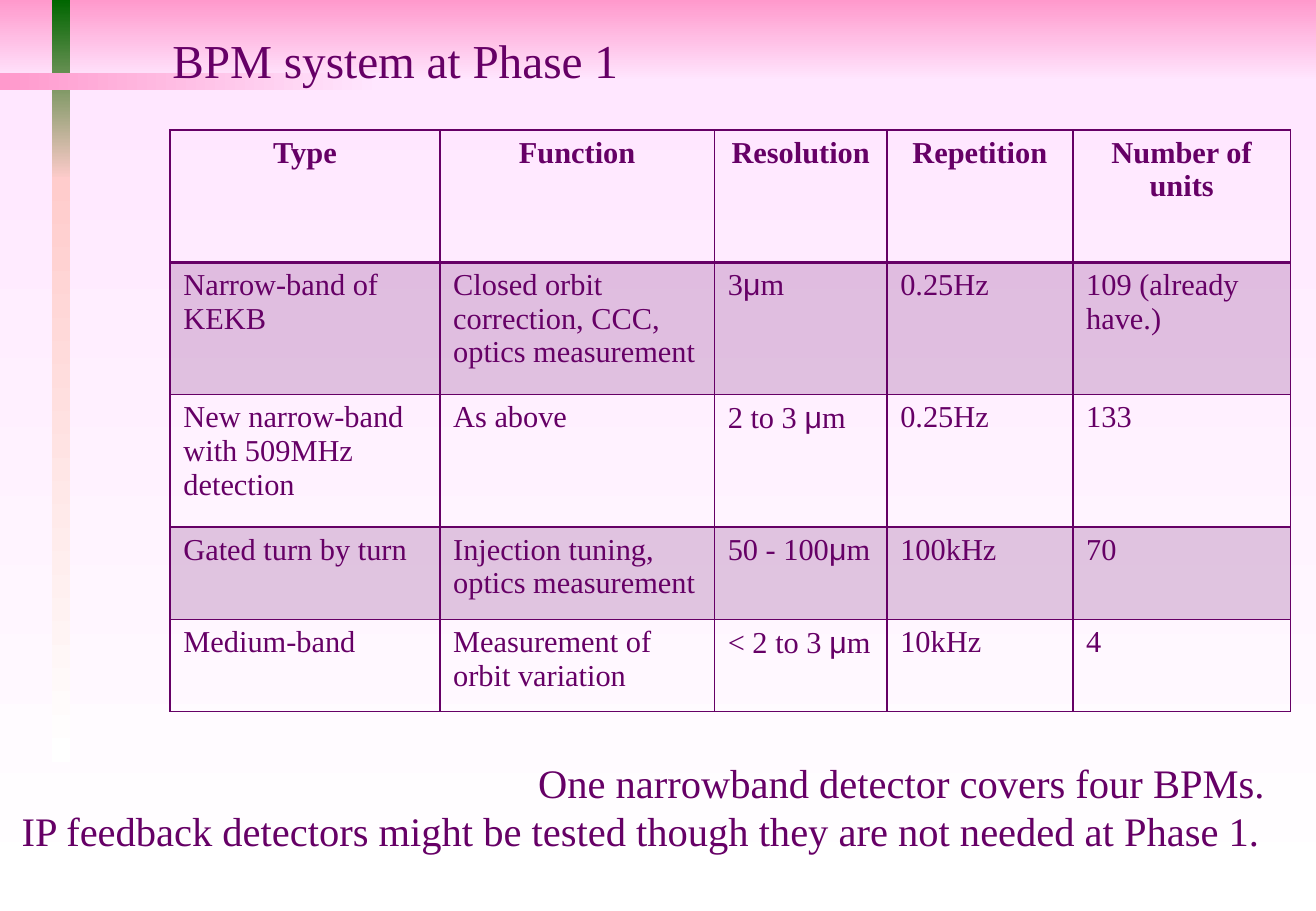
from dataclasses import dataclass

from lxml import etree
from pptx import Presentation
from pptx import util as u
from pptx.dml.color import RGBColor
from pptx.enum import shapes, text
from pptx.oxml import ns

PURPLE = RGBColor(0x66, 0x00, 0x66)
PINK = RGBColor(0xFF, 0x99, 0xCC)
PALE_PINK = RGBColor(0xFF, 0xE7, 0xFF)
GREEN = RGBColor(0x00, 0x66, 0x00)
SALMON = RGBColor(0xFF, 0xCC, 0xCC)
WHITE = RGBColor(0xFF, 0xFF, 0xFF)

SERIF = "Times New Roman"
SANS = "Arial"
MICRO = "μ"
DOWNWARD = 270
RIGHTWARD = 0
SLIDE_WIDTH = 10.83
SLIDE_HEIGHT = 7.5


@dataclass(frozen=True)
class Band:
    left: float
    top: float
    width: float
    height: float
    start: RGBColor
    end: RGBColor
    angle: int = DOWNWARD


@dataclass(frozen=True)
class Line:
    content: str
    indent: float = 0


@dataclass(frozen=True)
class Note:
    left: float
    top: float
    width: float
    height: float
    size: int
    lines: tuple[Line, ...]
    wrap: bool = True


BANDS = (
    Band(0, 0, SLIDE_WIDTH, 0.67, PINK, PALE_PINK),
    Band(0, 0.67, SLIDE_WIDTH, 6.83, PALE_PINK, WHITE),
    Band(0.43, 0, 0.15, 1.48, GREEN, SALMON),
    Band(0.43, 1.46, 0.15, 4.81, SALMON, WHITE),
    Band(0, 0.6, 3.14, 0.14, PINK, PALE_PINK, RIGHTWARD),
)

COLUMN_WIDTHS = (2.22, 2.26, 1.42, 1.53, 1.79)
ROW_HEIGHTS = (1.09, 1.09, 1.09, 0.76, 0.76)
DETECTORS = (
    ("Type", "Function", "Resolution", "Repetition", "Number of units"),
    ("Narrow-band of KEKB", "Closed orbit correction, CCC, optics measurement",
     "3μm", "0.25Hz", "109 (already have.)"),
    ("New narrow-band with 509MHz detection", "As above",
     "2 to 3 μm", "0.25Hz", "133"),
    ("Gated turn by turn", "Injection tuning, optics measurement",
     "50 - 100μm", "100kHz", "70"),
    ("Medium-band", "Measurement of orbit variation",
     "< 2 to 3 μm", "10kHz", "4"),
)

NOTES = (
    Note(0, 6.19, 10.56, 0.91, 24, (
        Line("One narrowband detector covers four BPMs.", 4.33),
        Line("IP feedback detectors might be tested though they are not needed at Phase 1.", 0.08),
    )),
    Note(1.32, 0.21, 3.91, 0.57, 28, (Line("BPM system at Phase 1"),), wrap=False),
)


def style_run(run, size: int, bold: bool = False, font: str = SERIF) -> None:
    run.font.name = font
    run.font.size = u.Pt(size)
    run.font.bold = bold
    run.font.color.rgb = PURPLE


def draw_band(slide, band: Band) -> None:
    stripe = slide.shapes.add_shape(
        shapes.MSO_SHAPE.RECTANGLE, u.Inches(band.left), u.Inches(band.top),
        u.Inches(band.width), u.Inches(band.height))
    stripe.shadow.inherit = False
    stripe.line.fill.background()
    stripe.fill.gradient()
    stripe.fill.gradient_angle = band.angle
    for stop, color in zip(stripe.fill.gradient_stops, (band.start, band.end)):
        stop.color.rgb = color


def set_borders(cell, bottom: int, top: int) -> None:
    properties = cell._tc.get_or_add_tcPr()
    weights = {"a:lnL": 1, "a:lnR": 1, "a:lnT": top, "a:lnB": bottom}
    for position, (edge, weight) in enumerate(weights.items()):
        border = etree.Element(ns.qn(edge), w=str(u.Pt(weight)))
        solid = etree.SubElement(border, ns.qn("a:solidFill"))
        etree.SubElement(solid, ns.qn("a:srgbClr"), val=str(PURPLE))
        properties.insert(position, border)


def fill_cell(cell, shaded: bool) -> None:
    if not shaded:
        cell.fill.background()
        return
    cell.fill.solid()
    cell.fill.fore_color.rgb = PURPLE
    color = cell._tc.get_or_add_tcPr().find(".//" + ns.qn("a:srgbClr"))
    etree.SubElement(color, ns.qn("a:alpha"), val="20000")


def write_cell(cell, content: str, heading: bool) -> None:
    cell.margin_left = cell.margin_right = u.Inches(0.11)
    cell.margin_top = cell.margin_bottom = u.Inches(0.05)
    paragraph = cell.text_frame.paragraphs[0]
    paragraph.alignment = text.PP_ALIGN.CENTER if heading else text.PP_ALIGN.LEFT
    before, micro, after = content.partition(MICRO)
    for part in filter(None, (before, micro, after)):
        run = paragraph.add_run()
        run.text = part
        style_run(run, 18, heading, SANS if part == MICRO else SERIF)


def draw_detector_table(slide) -> None:
    table = slide.shapes.add_table(
        len(ROW_HEIGHTS), len(COLUMN_WIDTHS), u.Inches(1.4), u.Inches(1.07),
        u.Inches(sum(COLUMN_WIDTHS)), u.Inches(sum(ROW_HEIGHTS))).table
    table.first_row = table.horz_banding = False
    for column, width in zip(table.columns, COLUMN_WIDTHS):
        column.width = u.Inches(width)
    for index, (row, height, detector) in enumerate(zip(table.rows, ROW_HEIGHTS, DETECTORS)):
        row.height = u.Inches(height)
        for cell, content in zip(row.cells, detector):
            write_cell(cell, content, heading=index == 0)
            fill_cell(cell, shaded=index % 2 == 1)
            set_borders(cell, bottom=2 if index == 0 else 1, top=2 if index == 1 else 1)


def draw_note(slide, note: Note) -> None:
    frame = slide.shapes.add_textbox(
        u.Inches(note.left), u.Inches(note.top),
        u.Inches(note.width), u.Inches(note.height)).text_frame
    frame.word_wrap = note.wrap
    frame.auto_size = text.MSO_AUTO_SIZE.SHAPE_TO_FIT_TEXT
    frame.text = "\n".join(line.content for line in note.lines)
    for paragraph, line in zip(frame.paragraphs, note.lines):
        if line.indent:
            paragraph._p.get_or_add_pPr().set("marL", str(u.Inches(line.indent)))
        style_run(paragraph.runs[0], note.size)


def main() -> None:
    deck = Presentation()
    deck.slide_width = u.Inches(SLIDE_WIDTH)
    deck.slide_height = u.Inches(SLIDE_HEIGHT)
    slide = deck.slides.add_slide(deck.slide_layouts[6])
    for band in BANDS:
        draw_band(slide, band)
    draw_detector_table(slide)
    for note in NOTES:
        draw_note(slide, note)
    deck.save("out.pptx")


if __name__ == "__main__":
    main()
